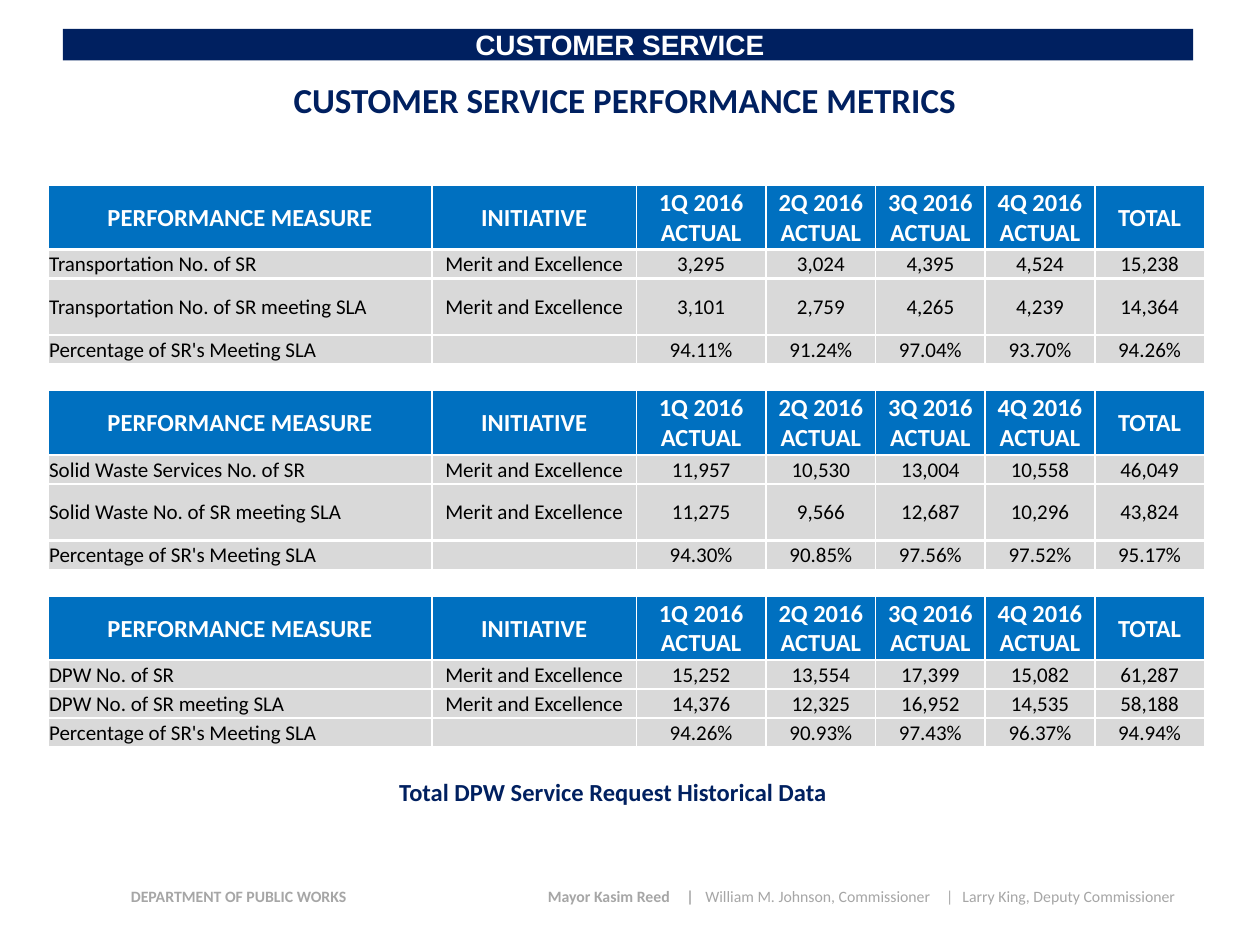
"""Build the customer service performance metrics slide."""
from dataclasses import dataclass

from lxml.etree import SubElement
from pptx import Presentation
from pptx.dml.color import RGBColor
from pptx.enum.shapes import MSO_SHAPE
from pptx.enum.text import MSO_ANCHOR as ANCHOR, PP_ALIGN as ALIGN
from pptx.oxml.ns import qn
from pptx.util import Inches, Pt

NAVY = RGBColor(0x00, 0x20, 0x60)
BLUE = RGBColor(0x00, 0x70, 0xC0)
LIGHT_GRAY = RGBColor(0xD9, 0xD9, 0xD9)
GRAY = RGBColor(0xA6, 0xA6, 0xA6)
WHITE = RGBColor(0xFF, 0xFF, 0xFF)
BLACK = RGBColor(0x00, 0x00, 0x00)

HEADER = ["PERFORMANCE MEASURE", "INITIATIVE",
          *(f"{quarter}Q 2016 ACTUAL" for quarter in range(1, 5)), "TOTAL"]
COL_WIDTHS = [3.05, 1.62, 1.03] + [0.87] * 4
HEADER_HEIGHT, ROW_HEIGHT, TALL_HEIGHT, GAP_HEIGHT = 0.51, 0.23, 0.45, 0.21
THIN, THICK = 1, 1.5
FOOTER_TABS = [3.31, 4.41, 4.56, 6.47, 6.6]


@dataclass
class Division:
    requests_label: str
    met_label: str
    requests: list[str]
    met: list[str]
    rates: list[str]
    met_height: float = TALL_HEIGHT

    def rows(self) -> list[list[str]]:
        initiative = "Merit and Excellence"
        return [HEADER,
                [self.requests_label, initiative, *self.requests],
                [self.met_label, initiative, *self.met],
                ["Percentage of SR's Meeting SLA", "", *self.rates]]

    def heights(self) -> list[float]:
        return [HEADER_HEIGHT, ROW_HEIGHT, self.met_height, ROW_HEIGHT]


@dataclass
class Label:
    text: str
    box: tuple[float, float, float, float]
    size: int
    font: str = "Calibri"
    color: RGBColor = NAVY
    anchor: ANCHOR = ANCHOR.TOP


DIVISIONS = [
    Division("Transportation No. of SR", "Transportation No. of SR meeting SLA",
             ["3,295", "3,024", "4,395", "4,524", "15,238"],
             ["3,101", "2,759", "4,265", "4,239", "14,364"],
             ["94.11%", "91.24%", "97.04%", "93.70%", "94.26%"]),
    Division("Solid Waste Services No. of SR", "Solid Waste No. of SR meeting SLA",
             ["11,957", "10,530", "13,004", "10,558", "46,049"],
             ["11,275", "9,566", "12,687", "10,296", "43,824"],
             ["94.30%", "90.85%", "97.56%", "97.52%", "95.17%"]),
    Division("DPW No. of SR", "DPW No. of SR meeting SLA",
             ["15,252", "13,554", "17,399", "15,082", "61,287"],
             ["14,376", "12,325", "16,952", "14,535", "58,188"],
             ["94.26%", "90.93%", "97.43%", "96.37%", "94.94%"], ROW_HEIGHT),
]
LABELS = [
    Label("CUSTOMER SERVICE", (0.73, 0.17, 8.38, 0.37), 16, "Arial", WHITE),
    Label("Total DPW Service Request Historical Data", (0.47, 6.12, 8.79, 0.34), 14),
    Label("CUSTOMER SERVICE PERFORMANCE METRICS", (0.47, 0.5, 8.98, 0.58), 20,
          anchor=ANCHOR.MIDDLE),
]


def style_run(r, size: int, color: RGBColor, bold: bool, font: str = "Calibri") -> None:
    r.font.size, r.font.bold, r.font.name = Pt(size), bold, font
    r.font.color.rgb = color


def add_text_frame(slide, box: tuple[float, float, float, float], anchor: ANCHOR):
    tf = slide.shapes.add_textbox(*map(Inches, box)).text_frame
    tf.word_wrap = True
    tf.vertical_anchor = anchor
    return tf


def add_label(slide, label: Label) -> None:
    tf = add_text_frame(slide, label.box, label.anchor)
    tf.text = label.text
    p = tf.paragraphs[0]
    p.alignment = ALIGN.CENTER
    style_run(p.runs[0], label.size, label.color, True, label.font)


def add_banner(slide) -> None:
    sp = slide.shapes.add_shape(MSO_SHAPE.RECTANGLE,
                                *map(Inches, (0.5, 0.23, 8.97, 0.25)))
    sp.shadow.inherit = False
    sp.fill.solid()
    sp.fill.fore_color.rgb = NAVY
    sp.line.fill.background()


def add_footer(slide) -> None:
    p = add_text_frame(slide, (0.94, 6.99, 8.56, 0.28), ANCHOR.MIDDLE).paragraphs[0]
    p.line_spacing = 0.8
    tabs = SubElement(p._p.get_or_add_pPr(), qn("a:tabLst"))
    for position in FOOTER_TABS:
        SubElement(tabs, qn("a:tab"), pos=str(Inches(position)), algn="l")
    for text, bold in [
        ("DEPARTMENT OF PUBLIC WORKS\tMayor Kasim Reed\t|\t", True),
        ("William M. Johnson, Commissioner\t|\tLarry King, Deputy Commissioner", False),
    ]:
        r = p.add_run()
        r.text = text
        style_run(r, 9, GRAY, bold)


def set_borders(cell, top: float, bottom: float) -> None:
    tc_pr = cell._tc.get_or_add_tcPr()
    for side, width in (("L", THIN), ("R", THIN), ("T", top), ("B", bottom)):
        ln = SubElement(tc_pr, qn(f"a:ln{side}"), w=str(Pt(width)))
        SubElement(SubElement(ln, qn("a:solidFill")), qn("a:srgbClr"), val=str(WHITE))


def fill_cell(cell, text: str, header: bool, align: ALIGN, fill: RGBColor | None) -> None:
    cell.margin_left = cell.margin_top = cell.margin_right = Inches(0.01)
    cell.margin_bottom = 0
    cell.vertical_anchor = ANCHOR.MIDDLE
    if fill is None:
        cell.fill.background()
    else:
        cell.fill.solid()
        cell.fill.fore_color.rgb = fill
    p = cell.text_frame.paragraphs[0]
    p.alignment = align
    if text:
        p.text = text
        style_run(p.runs[0], 14 if header else 12, WHITE if header else BLACK, header)
    else:
        SubElement(p._p, qn("a:endParaRPr"), sz="1000")


def add_metrics_table(slide, divisions: list[Division]) -> None:
    rows, heights = [], []
    for division in divisions:
        if rows:
            rows.append([""] * len(HEADER))
            heights.append(GAP_HEIGHT)
        rows += division.rows()
        heights += division.heights()
    table = slide.shapes.add_table(
        len(rows), len(HEADER), Inches(0.38), Inches(1.47),
        Inches(sum(COL_WIDTHS)), Inches(sum(heights))).table
    table.first_row = table.horz_banding = False
    for column, width in zip(table.columns, COL_WIDTHS):
        column.width = Inches(width)
    for i, (values, height) in enumerate(zip(rows, heights)):
        table.rows[i].height = Inches(height)
        header, gap = values is HEADER, not any(values)
        last = i + 1 == len(rows) or not any(rows[i + 1])
        fill = BLUE if header else None if gap else LIGHT_GRAY
        for j, text in enumerate(values):
            cell = table.cell(i, j)
            set_borders(cell, THIN if header or gap else THICK,
                        THIN if last or gap else THICK)
            align = ALIGN.LEFT if j == 0 and not header else ALIGN.CENTER
            fill_cell(cell, text, header, align, fill)


def main() -> None:
    prs = Presentation()
    prs.slide_width, prs.slide_height = Inches(10), Inches(7.5)
    slide = prs.slides.add_slide(prs.slide_layouts[6])
    add_footer(slide)
    add_banner(slide)
    for label in LABELS:
        add_label(slide, label)
    add_metrics_table(slide, DIVISIONS)
    prs.save("out.pptx")


if __name__ == "__main__":
    main()
